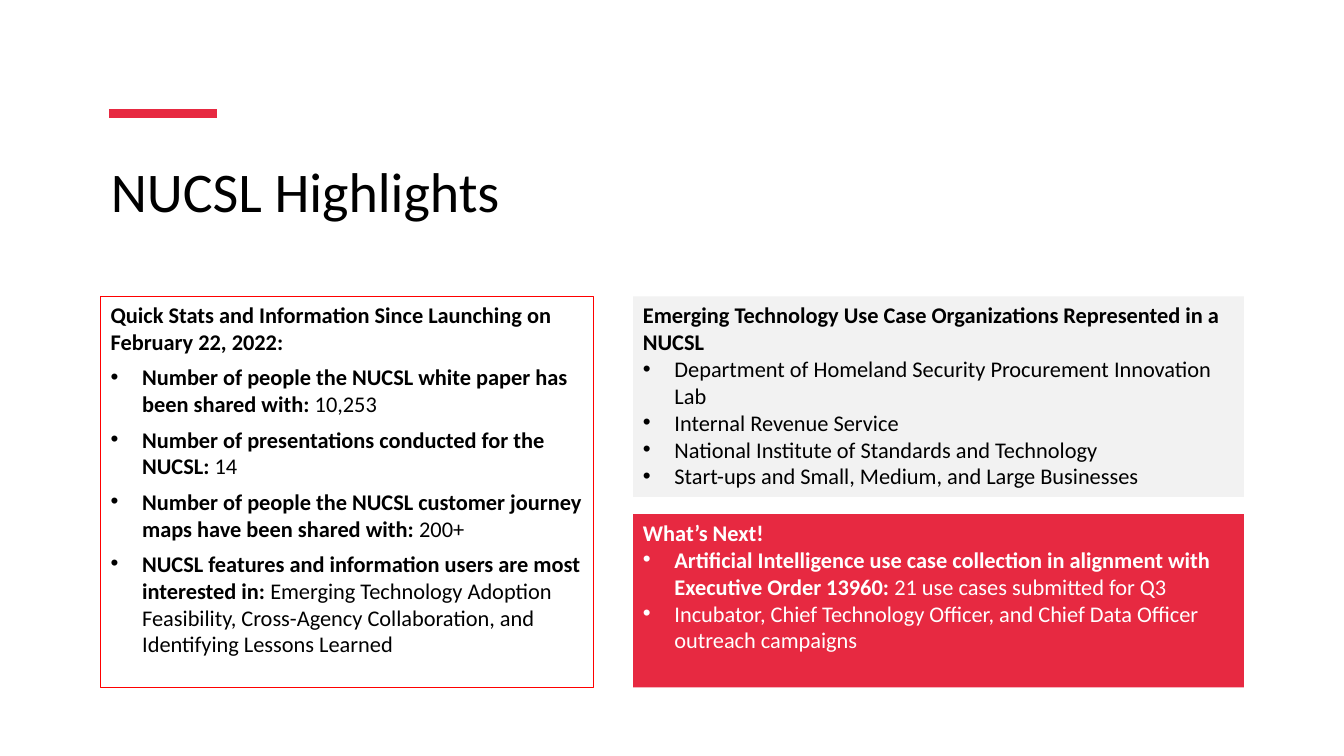
import pptx
import pptx.util
import pptx.dml.color
import pptx.enum.shapes
import pptx.enum.text
import lxml.etree

Pt = pptx.util.Pt
ENUM = pptx.enum.text
HUES = {"red": "E72941", "edge": "FF0000", "gray": "F2F2F2", "black": "000000", "white": "FFFFFF"}


def hue(name):
    return pptx.dml.color.RGBColor.from_string(HUES[name])


def style(run, size, color, bold=False):
    run.font.name = "Calibri"
    run.font.size = Pt(size)
    run.font.bold = bold
    run.font.color.rgb = hue(color)


deck = pptx.Presentation()
deck.slide_width, deck.slide_height = Pt(960), Pt(540)
slide = deck.slides.add_slide(deck.slide_layouts[5])

title = slide.shapes.title
title.left, title.top, title.width, title.height = Pt(72), Pt(108), Pt(816), Pt(103.7)
frame = title.text_frame
frame.text = "NUCSL Highlights"
frame.word_wrap = True
frame.auto_size = ENUM.MSO_AUTO_SIZE.NONE
frame.vertical_anchor = ENUM.MSO_ANCHOR.TOP
frame.paragraphs[0].alignment = ENUM.PP_ALIGN.LEFT
style(frame.paragraphs[0].runs[0], 40, "black")

bar = slide.shapes.add_connector(
    pptx.enum.shapes.MSO_CONNECTOR.STRAIGHT, Pt(77.8), Pt(81.2), Pt(154.8), Pt(81.2))
bar.line.color.rgb = hue("red")
bar.line.width = Pt(6)
lxml.etree.SubElement(bar.element.spPr, pptx.oxml.ns.qn("a:effectLst"))

stats = [
    ("Number of people the NUCSL white paper has been shared with: ", "10,253"),
    ("Number of presentations conducted for the NUCSL: ", "14"),
    ("Number of people the NUCSL customer journey maps have been shared with: ", "200+"),
    ("NUCSL features and information users are most interested in: ",
     "Emerging Technology Adoption Feasibility, Cross-Agency Collaboration, "
     "and Identifying Lessons Learned"),
]
groups = [
    ("", "Department of Homeland Security Procurement Innovation Lab"),
    ("", "Internal Revenue Service"),
    ("", "National Institute of Standards and Technology"),
    ("", "Start-ups and Small, Medium, and Large Businesses"),
]
plans = [
    ("Artificial Intelligence use case collection in alignment with Executive Order 13960: ",
     "21 use cases submitted for Q3"),
    ("", "Incubator, Chief Technology Officer, and Chief Data Officer outreach campaigns"),
]
cards = [
    ((72, 211.7, 352, 279.3), None, "edge", "black", 6,
     "Quick Stats and Information Since Launching on February 22, 2022:", stats),
    ((452.2, 211.7, 436.3, 143.3), "gray", None, "black", 0,
     "Emerging Technology Use Case Organizations Represented in a NUCSL", groups),
    ((452.2, 367.2, 436.3, 123.8), "red", None, "white", 0, "What’s Next!", plans),
]

for place, fill, edge, ink, gap, head, items in cards:
    card = slide.shapes.add_shape(
        pptx.enum.shapes.MSO_SHAPE.RECTANGLE, *[Pt(n) for n in place])
    card.shadow.inherit = False
    if fill:
        card.fill.solid()
        card.fill.fore_color.rgb = hue(fill)
    else:
        card.fill.background()
    if edge:
        card.line.color.rgb = hue(edge)
        card.line.width = Pt(1)
    else:
        card.line.fill.background()
    frame = card.text_frame
    frame.word_wrap = True
    frame.vertical_anchor = ENUM.MSO_ANCHOR.TOP
    for row, (label, value) in enumerate([(head, "")] + items):
        para = frame.add_paragraph() if row else frame.paragraphs[0]
        para.alignment = ENUM.PP_ALIGN.LEFT
        para.space_after = Pt(gap)
        for text, bold in ((label, True), (value, False)):
            if text:
                run = para.add_run()
                run.text = text
                style(run, 16, ink, bold)
        if row:
            props = para._p.get_or_add_pPr()
            props.set("marL", str(Pt(22.5)))
            props.set("indent", str(-Pt(22.5)))
            font = lxml.etree.SubElement(props, pptx.oxml.ns.qn("a:buFont"))
            font.set("typeface", "Arial")
            mark = lxml.etree.SubElement(props, pptx.oxml.ns.qn("a:buChar"))
            mark.set("char", "•")

deck.save("out.pptx")
